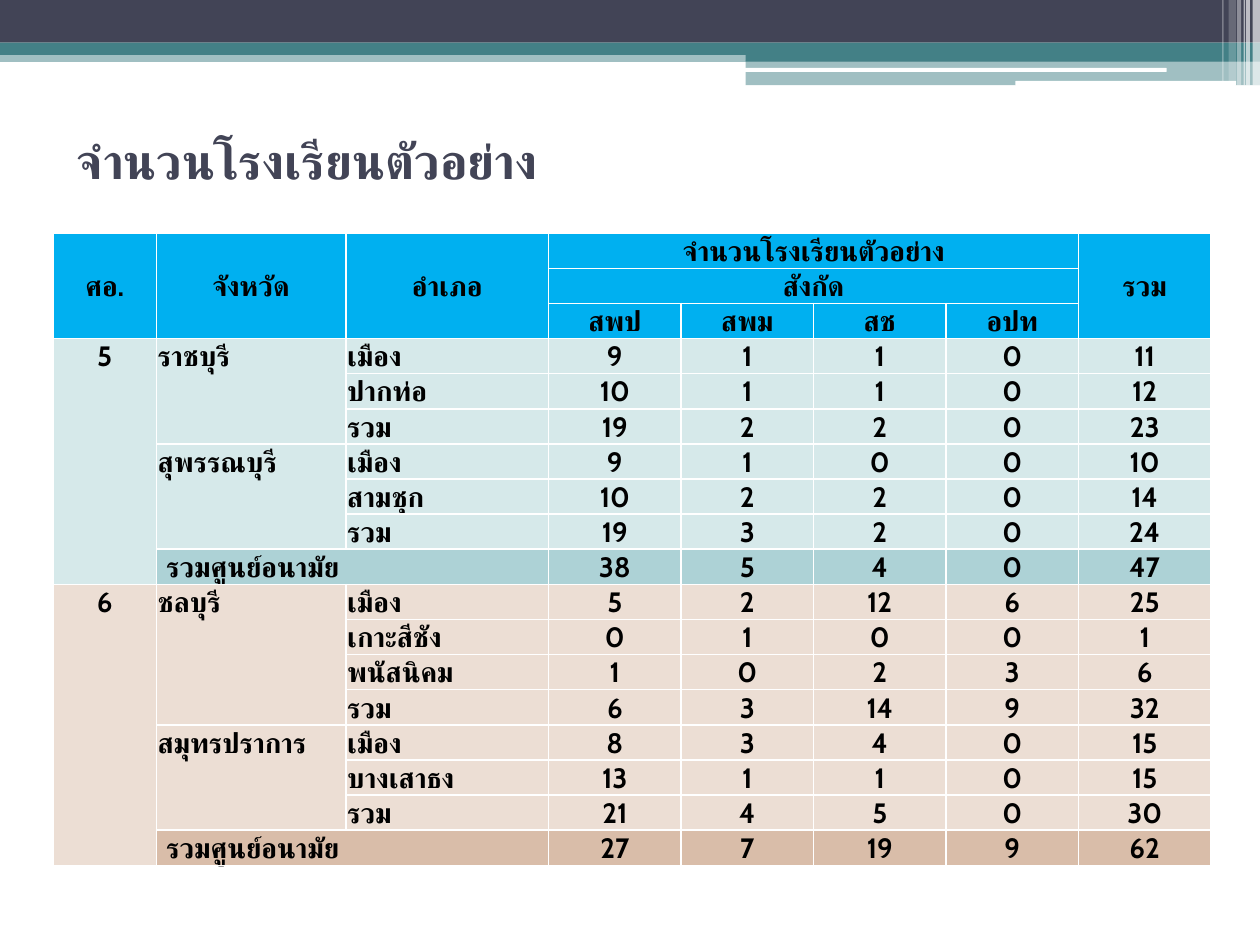
from lxml import etree
from pptx import Presentation
from pptx import util as u
from pptx.dml import color
from pptx.enum import shapes, text
from pptx.oxml import ns

FONT = "Cabin"
TITLE = "จำนวนโรงเรียนตัวอย่าง"
TOTAL, CENTRE_TOTAL = "รวม", "รวมศูนย์อนามัย"
AGENCIES = ["สพป", "สพม", "สช", "อปท"]
HEADERS = [  # text, first row, first column, last row, last column
    ("ศอ.", 0, 0, 2, 0), ("จังหวัด", 0, 1, 2, 1), ("อำเภอ", 0, 2, 2, 2),
    (TITLE, 0, 3, 0, 6), ("สังกัด", 1, 3, 1, 6), (TOTAL, 0, 7, 2, 7),
]
CENTRES = [  # name, fill, total fill, schools by province, district and agency
    ("5", "D6E9EA", "ADD2D6", {
        "ราชบุรี": {"เมือง": (9, 1, 1, 0), "ปากท่อ": (10, 1, 1, 0)},
        "สุพรรณบุรี": {"เมือง": (9, 1, 0, 0), "สามชุก": (10, 2, 2, 0)},
    }),
    ("6", "ECDED4", "D9BDA9", {
        "ชลบุรี": {"เมือง": (5, 2, 12, 6), "เกาะสีชัง": (0, 1, 0, 0),
                  "พนัสนิคม": (1, 0, 2, 3)},
        "สมุทรปราการ": {"เมือง": (8, 3, 4, 0), "บางเสาธง": (13, 1, 1, 0)},
    }),
]
COL_WIDTHS = [2.08, 3.82, 4.09] + [2.67] * 5
HEADER_H, BODY_H = 0.67, 0.7
HEADER_FILL, DARK, TEAL, WHITE = "00B0F0", "424456", "438086", "FFFFFF"
BANDS = [  # left, top, width, height, colour, opacity in percent
    (0, 1.02, 25.4, 0.23, TEAL, 50), (0, 0, 25.4, 0.86, DARK, 100),
    (0, 0.86, 25.4, 0.25, TEAL, 100), (15.03, 0.99, 10.37, 0.25, TEAL, 100),
    (15.03, 1.22, 10.37, 0.5, TEAL, 50),
]
ROUNDED = [(15.01, 1.37, 8.51, 0.08, WHITE, 100), (20.47, 1.63, 4.45, 0.1, WHITE, 100)]
STRIPES = [(left, 0, width, height, WHITE, opacity) for left, width, height, opacity in [
    (25.25, 0.15, 1.73, 65), (25.12, 0.08, 1.73, 65), (25.07, 0.03, 1.73, 60),
    (24.94, 0.08, 1.73, 40), (24.77, 0.15, 1.63, 20), (24.64, 0.03, 1.63, 30)]]


def rgb(value):
    return color.RGBColor.from_string(value)


def paint(sp, value):
    sp.fill.solid()
    sp.fill.fore_color.rgb = rgb(value)


def add_bar(slide, kind, left, top, width, height, value, opacity):
    sp = slide.shapes.add_shape(kind, *map(u.Cm, (left, top, width, height)))
    sp.shadow.inherit = False
    sp.line.fill.background()
    paint(sp, value)
    if opacity < 100:
        clr = sp.fill._xPr.find(".//" + ns.qn("a:srgbClr"))
        etree.SubElement(clr, ns.qn("a:alpha"), val=str(opacity * 1000))


def write(tf, content, size, value, align):
    p = tf.paragraphs[0]
    p.alignment = align
    r = p.add_run()
    r.text = content
    for name, setting in dict(name=FONT, size=u.Pt(size), bold=True).items():
        setattr(r.font, name, setting)
    r.font.color.rgb = rgb(value)
    etree.SubElement(r._r.get_or_add_rPr(), ns.qn("a:cs"), typeface=FONT)


def add_borders(cell):
    tc_pr = cell._tc.get_or_add_tcPr()
    for side in ("lnL", "lnR", "lnT", "lnB"):
        ln = etree.SubElement(tc_pr, ns.qn("a:" + side), w=str(u.Pt(1)))
        fill = etree.SubElement(ln, ns.qn("a:solidFill"))
        etree.SubElement(fill, ns.qn("a:srgbClr"), val=WHITE)


def put(table, content, fill, row, col, last_row=None, last_col=None,
        anchor=text.MSO_ANCHOR.BOTTOM, align=text.PP_ALIGN.CENTER, indent=0.03):
    """Fill a cell, merged as far as the last row and column when given."""
    last_row = row if last_row is None else last_row
    last_col = col if last_col is None else last_col
    cell = table.cell(row, col)
    if (last_row, last_col) != (row, col):
        cell.merge(table.cell(last_row, last_col))
    for i in range(row, last_row + 1):
        for j in range(col, last_col + 1):
            add_borders(table.cell(i, j))
            paint(table.cell(i, j), fill)
    layout = dict(margin_left=u.Cm(indent), margin_right=u.Cm(0.03),
                  margin_top=u.Cm(0.03), margin_bottom=0, vertical_anchor=anchor)
    for name, setting in layout.items():
        setattr(cell, name, setting)
    write(cell.text_frame, str(content), 16, "000000", align)


def put_counts(table, row, counts, fill):
    for col, count in enumerate([*counts, sum(counts)], 3):
        put(table, count, fill, row, col)


def column_sums(rows):
    return [sum(values) for values in zip(*rows)]


def fill_centre(table, row, name, fill, total_fill, provinces):
    """Write one health centre and return the row after it."""
    first, totals = row, []
    top, left = text.MSO_ANCHOR.TOP, text.PP_ALIGN.LEFT
    for province, districts in provinces.items():
        totals.append(column_sums(districts.values()))
        put(table, province, fill, row, 1, row + len(districts), anchor=top, align=left)
        for district, counts in [*districts.items(), (TOTAL, totals[-1])]:
            put(table, district, fill, row, 2, align=left)
            put_counts(table, row, counts, fill)
            row += 1
    put(table, CENTRE_TOTAL, total_fill, row, 1, last_col=2, align=left, indent=0.2)
    put_counts(table, row, column_sums(totals), total_fill)
    put(table, name, fill, first, 0, row, anchor=top)
    return row + 1


def add_school_table(slide):
    body = sum(1 + sum(len(d) + 1 for d in c[3].values()) for c in CENTRES)
    heights = [HEADER_H] * 3 + [BODY_H] * body
    frame = slide.shapes.add_table(
        len(heights), len(COL_WIDTHS), u.Cm(1.07), u.Cm(4.7),
        u.Cm(sum(COL_WIDTHS)), u.Cm(sum(heights)))
    table = frame.table
    table.first_row = table.horz_banding = False
    for column, width in zip(table.columns, COL_WIDTHS):
        column.width = u.Cm(width)
    for line, height in zip(table.rows, heights):
        line.height = u.Cm(height)
    middle = text.MSO_ANCHOR.MIDDLE
    for content, *area in HEADERS:
        put(table, content, HEADER_FILL, *area, anchor=middle)
    for col, agency in enumerate(AGENCIES, 3):
        put(table, agency, HEADER_FILL, 2, col, anchor=middle)
    row = 3
    for centre in CENTRES:
        row = fill_centre(table, row, *centre)


def main():
    prs = Presentation()
    prs.slide_width, prs.slide_height = u.Cm(25.4), u.Cm(19.05)
    slide = prs.slides.add_slide(prs.slide_layouts[6])
    kinds = shapes.MSO_SHAPE
    for kind, bars in [(kinds.RECTANGLE, BANDS), (kinds.ROUNDED_RECTANGLE, ROUNDED),
                       (kinds.RECTANGLE, STRIPES)]:
        for bar in bars:
            add_bar(slide, kind, *bar)
    tf = slide.shapes.add_textbox(*map(u.Cm, (1.3, 1.73, 22.86, 2.97))).text_frame
    tf.word_wrap = True
    tf.vertical_anchor = text.MSO_ANCHOR.MIDDLE
    write(tf, TITLE, 28, DARK, text.PP_ALIGN.LEFT)
    add_school_table(slide)
    prs.save("out.pptx")


if __name__ == "__main__":
    main()
